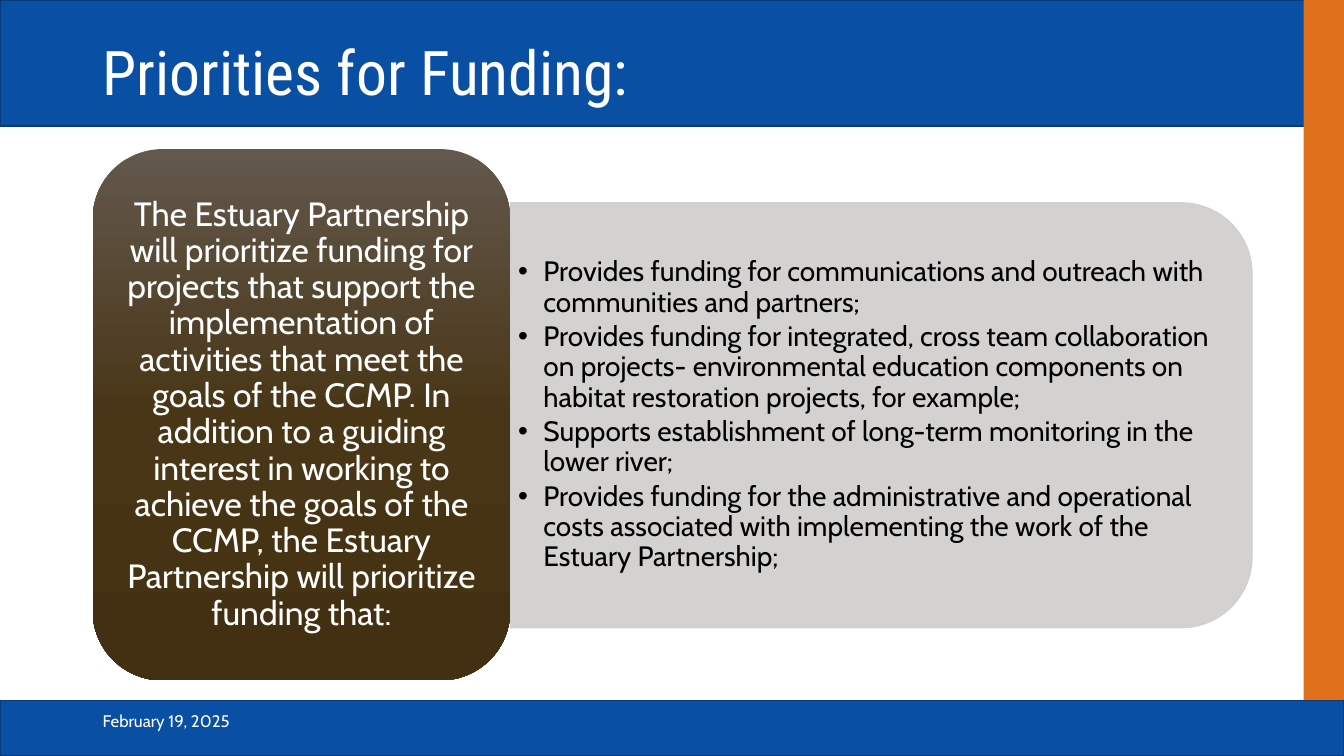
from lxml.etree import SubElement
from pptx import Presentation
from pptx.dml.color import RGBColor
from pptx.enum.shapes import MSO_SHAPE
from pptx.enum.text import MSO_ANCHOR, PP_ALIGN
from pptx.oxml.ns import qn
from pptx.util import Inches, Pt

BLUE, NAVY, ORANGE = "094FA4", "073A79", "E0701C"
WHITE, BLACK, GREY = "FFFFFF", "000000", "CFCECC"
BROWNS = [(0, "63584D"), (50, "493617"), (100, "433012")]

INTRO = (
    "The Estuary Partnership will prioritize funding for projects that support "
    "the implementation of activities that meet the goals of the CCMP. In "
    "addition to a guiding interest in working to achieve the goals of the CCMP, "
    "the Estuary Partnership will prioritize funding that:"
)
PRIORITIES = [
    "Provides funding for communications and outreach with communities and partners;",
    "Provides funding for integrated, cross team collaboration on projects- "
    "environmental education components on habitat restoration projects, for example;",
    "Supports establishment of long-term monitoring in the lower river;",
    "Provides funding for the administrative and operational costs associated "
    "with implementing the work of the Estuary Partnership;",
]


def rgb(value):
    return RGBColor.from_string(value)


def add_block(slide, kind, box, color, outline=None, weight=1):
    block = slide.shapes.add_shape(kind, *map(Inches, box))
    block.shadow.inherit = False
    block.fill.solid()
    block.fill.fore_color.rgb = rgb(color)
    if outline:
        block.line.color.rgb = rgb(outline)
        block.line.width = Pt(weight)
    else:
        block.line.fill.background()
    return block


def set_opacity(block, percent):
    for color in block._element.spPr.iter(qn("a:srgbClr")):
        SubElement(color, qn("a:alpha"), val=str(percent * 1000))


def set_vertical_gradient(block, stops):
    block.fill.gradient()
    block.fill.gradient_angle = 270
    stop_list = block._element.spPr.find(".//" + qn("a:gsLst"))
    stop_list.clear()
    for percent, color in stops:
        stop = SubElement(stop_list, qn("a:gs"), pos=str(percent * 1000))
        SubElement(stop, qn("a:srgbClr"), val=color)


def add_bullet(paragraph):
    properties = paragraph._p.get_or_add_pPr()
    properties.set("marL", str(Inches(0.25)))
    properties.set("indent", str(-Inches(0.25)))
    SubElement(properties, qn("a:buFont"), typeface="Arial")
    SubElement(properties, qn("a:buChar"), char="•")


def write(frame, texts, size, color, font="Cabin", align=PP_ALIGN.LEFT,
          line_spacing=0.9, space_after=0, bullets=False):
    frame.word_wrap = True
    frame.vertical_anchor = MSO_ANCHOR.MIDDLE
    for index, text in enumerate(texts):
        paragraph = frame.paragraphs[0] if index == 0 else frame.add_paragraph()
        if bullets:
            add_bullet(paragraph)
        paragraph.alignment = align
        paragraph.line_spacing = line_spacing
        paragraph.space_before = Pt(0)
        paragraph.space_after = Pt(space_after)
        run = paragraph.add_run()
        run.text = text
        run.font.name = font
        run.font.size = Pt(size)
        run.font.color.rgb = rgb(color)


def add_bands(slide):
    add_block(slide, MSO_SHAPE.RECTANGLE, (0, 0, 13.33, 1.25), BLUE, NAVY)
    add_block(slide, MSO_SHAPE.RECTANGLE, (12.93, -0.01, 0.42, 7.37), ORANGE)
    add_block(slide, MSO_SHAPE.RECTANGLE, (0, 6.95, 13.33, 0.55), BLUE, NAVY)


def add_title(slide, text):
    title = slide.shapes.title
    title.left, title.top = Inches(0.92), Inches(0.24)
    title.width, title.height = Inches(11.5), Inches(1.01)
    write(title.text_frame, [text], 44, WHITE, "Roboto Condensed")
    slide.shapes._spTree.append(title._element)


def add_date(slide, text):
    date = slide.shapes.add_textbox(*map(Inches, (0.92, 6.95, 3, 0.4)))
    write(date.text_frame, [text], 12, WHITE, line_spacing=1, space_after=6)


def add_priorities(slide, texts):
    panel = add_block(slide, MSO_SHAPE.ROUND_2_SAME_RECTANGLE,
                      (6.63, 0.44, 4.22, 7.36), GREY, GREY, 0.5)
    panel.rotation = 90
    set_opacity(panel, 90)
    priorities = slide.shapes.add_textbox(*map(Inches, (5.06, 2.22, 7.15, 3.8)))
    frame = priorities.text_frame
    frame.margin_left = frame.margin_right = Inches(0.08)
    frame.margin_top = frame.margin_bottom = Inches(0.04)
    write(frame, texts, 20, BLACK, space_after=3, bullets=True)


def add_intro(slide, text):
    intro = add_block(slide, MSO_SHAPE.ROUNDED_RECTANGLE,
                      (0.92, 1.48, 4.14, 5.27), WHITE)
    set_vertical_gradient(intro, BROWNS)
    frame = intro.text_frame
    frame.margin_top = frame.margin_bottom = Inches(0.05)
    write(frame, [text], 24, WHITE, align=PP_ALIGN.CENTER)


def main():
    deck = Presentation()
    deck.slide_width, deck.slide_height = Inches(13.33), Inches(7.5)
    slide = deck.slides.add_slide(deck.slide_layouts[5])
    add_bands(slide)
    add_title(slide, "Priorities for Funding:")
    add_date(slide, "February 19, 2025")
    add_priorities(slide, PRIORITIES)
    add_intro(slide, INTRO)
    deck.save("out.pptx")


if __name__ == "__main__":
    main()
